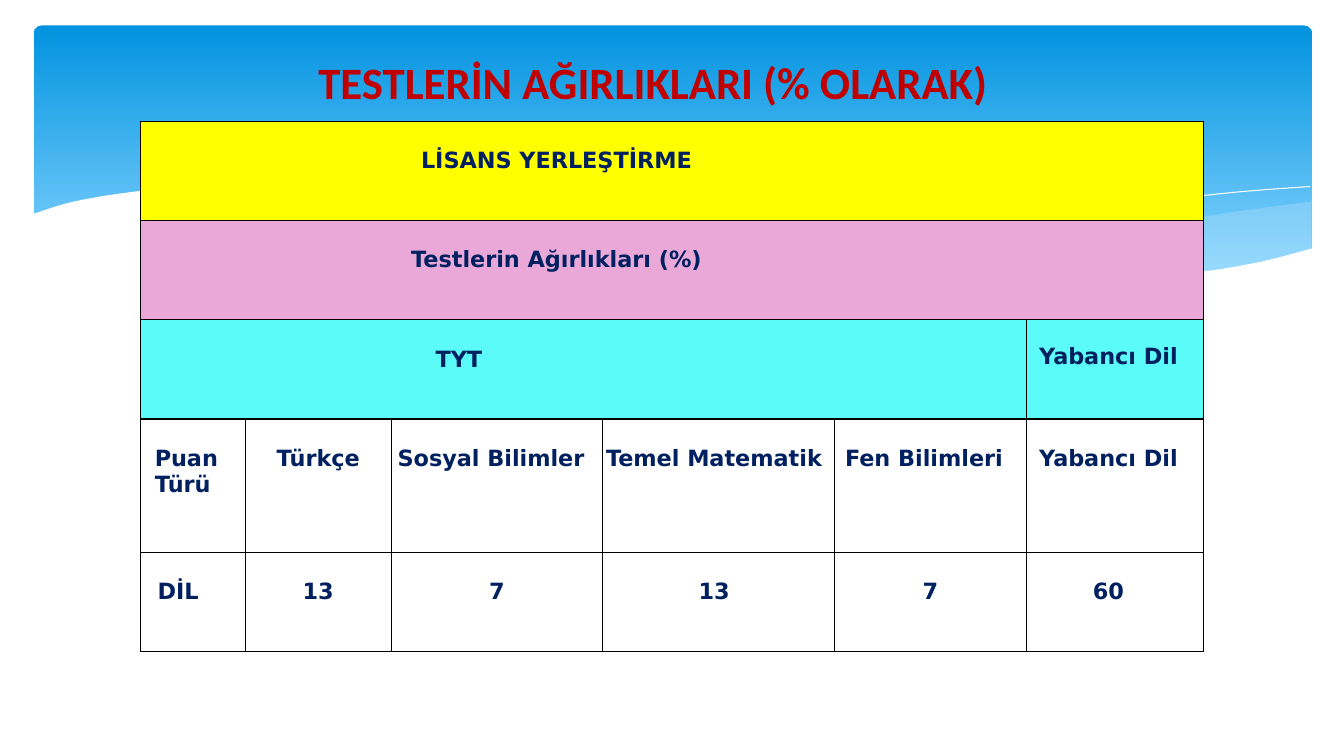
from dataclasses import dataclass

from lxml.etree import SubElement
from pptx import Presentation
from pptx.dml.color import RGBColor
from pptx.enum.shapes import MSO_SHAPE
from pptx.enum.text import MSO_ANCHOR, PP_ALIGN
from pptx.oxml.ns import qn
from pptx.slide import Slide
from pptx.table import Table
from pptx.text.text import TextFrame
from pptx.util import Cm, Pt

HUES = {
    "white": "FFFFFF", "black": "000000", "navy": "002060", "red": "C00000",
    "deep": "0293E0", "sky": "83D3FE", "mist": "C6E7FC",
    "gold": "FFFF00", "pink": "EAA8D9", "aqua": "5AFBF8",
}
COLS = (2.64, 3.68, 5.33, 5.84, 4.83, 4.47)
ROWS = (2.5, 2.5, 2.5, 3.36, 2.5)
Point = tuple[float, float]


@dataclass(frozen=True)
class Wave:
    edges: tuple[tuple[Point, ...], ...]
    fill: str = ""
    alpha: int = 100


@dataclass(frozen=True)
class Entry:
    row: int
    col: int
    text: str
    span: int = 1
    fill: str = ""
    left: float = 0
    right: float = 0
    align: PP_ALIGN = PP_ALIGN.CENTER
    top: float = 0.67


WAVES = (
    Wave((
        ((33.05, 5.08), (31.17, 5.33), (29.13, 5.66), (26.35, 6.15), (24, 6.53), (22.4, 6.73)),
        ((22.4, 6.73), (24.33, 6.88), (26.04, 7.01), (27.2, 7.06), (28.27, 7.04),
         (29.53, 6.96), (30.66, 6.83), (31.67, 6.64), (32.61, 6.4), (33.05, 6.27)),
    ), "mist", 29),
    Wave((
        ((30.23, 6.93), (28.35, 6.73), (26.26, 6.45), (23.9, 6.1), (21.31, 5.64), (18.8, 5.2),
         (16.56, 4.95), (14.22, 4.75), (12.24, 4.7), (10.62, 4.78), (9.7, 4.85)),
        ((9.7, 4.85), (12.27, 5.16), (15.21, 5.64), (17.93, 6.1), (20.37, 6.48),
         (23.04, 6.81), (25.34, 7.01), (27.33, 7.06), (29.03, 7.01), (30.23, 6.93)),
    ), "mist", 40),
    Wave((
        ((10.46, 4.95), (11.63, 4.83), (13.11, 4.75), (15.24, 4.78), (18.03, 4.93),
         (20.6, 5.18), (23.52, 5.56), (26.92, 6.12), (30.73, 6.91)),
    )),
    Wave((
        ((20.78, 6.53), (23.55, 5.97), (26.29, 5.49), (29.34, 5.05), (31.29, 4.83), (33.02, 4.7)),
    )),
    Wave((
        ((33.1, 6.25), (31.85, 6.58), (30.43, 6.83), (28.8, 6.99), (26.87, 7.01), (24.61, 6.91),
         (21.92, 6.65), (18.8, 6.22), (15.14, 5.59), (12.34, 5.13), (9.91, 4.83), (7.77, 4.7),
         (5.97, 4.67), (4.47, 4.72), (3.23, 4.85), (2.26, 5), (1.55, 5.16), (0.79, 5.41)),
        ((0.79, 8.36), (33.1, 8.36)),
    ), "white"),
)

CELLS = (
    Entry(0, 0, "LİSANS YERLEŞTİRME", span=6, fill="gold", right=5.82),
    Entry(1, 0, "Testlerin Ağırlıkları (%)", span=6, fill="pink", right=5.82),
    Entry(2, 0, "TYT", span=5, fill="aqua", right=6.27),
    Entry(2, 5, "Yabancı Dil", fill="aqua", right=0.32, top=0.6),
    Entry(3, 0, "Puan Türü", left=0.36, align=PP_ALIGN.LEFT),
    Entry(3, 1, "Türkçe", left=0.46, right=0.46),
    Entry(3, 2, "Sosyal Bilimler", right=0.3),
    Entry(3, 3, "Temel Matematik", right=0.23),
    Entry(3, 4, "Fen Bilimleri", right=0.32),
    Entry(3, 5, "Yabancı Dil", right=0.32),
    Entry(4, 0, "DİL", left=0.43, align=PP_ALIGN.LEFT),
    Entry(4, 1, "13", left=0.46, right=0.46),
    Entry(4, 2, "7"),
    Entry(4, 3, "13", right=0.23),
    Entry(4, 4, "7"),
    Entry(4, 5, "60", right=0.32),
)


def hue(name: str) -> RGBColor:
    return RGBColor.from_string(HUES[name])


def smooth(edge: tuple[Point, ...], steps: int = 4) -> list[Point]:
    if len(edge) < 3:
        return list(edge)
    pad = (edge[0], *edge, edge[-1])
    curve = [edge[0]]
    for quad in zip(pad, pad[1:], pad[2:], pad[3:]):
        for step in range(1, steps + 1):
            t = step / steps
            x, y = (
                (2 * b + (c - a) * t + (2 * a - 5 * b + 4 * c - d) * t**2
                 + (3 * b - a - 3 * c + d) * t**3) / 2
                for a, b, c, d in zip(*quad)
            )
            curve.append((x, y))
    return curve


def draw_wave(slide: Slide, wave: Wave) -> None:
    dots = [(Cm(x), Cm(y)) for edge in wave.edges for x, y in smooth(edge)]
    pen = slide.shapes.build_freeform(*dots[0])
    pen.add_line_segments(dots[1:], close=bool(wave.fill))
    shape = pen.convert_to_shape()
    shape.shadow.inherit = False
    if not wave.fill:
        shape.fill.background()
        shape.line.color.rgb = hue("white")
        shape.line.width = Pt(0)
        return
    shape.line.fill.background()
    shape.fill.solid()
    shape.fill.fore_color.rgb = hue(wave.fill)
    if wave.alpha < 100:
        tint = shape.element.spPr.find(qn("a:solidFill"))[0]
        SubElement(tint, qn("a:alpha"), val=str(wave.alpha * 1000))


def draw_sky(slide: Slide) -> None:
    sky = slide.shapes.add_shape(
        MSO_SHAPE.ROUNDED_RECTANGLE, Cm(0.85), Cm(0.64), Cm(32.22), Cm(6.86))
    sky.adjustments[0] = 0.03
    sky.shadow.inherit = False
    sky.line.fill.background()
    sky.fill.gradient()
    sky.fill.gradient_angle = 270
    for stop, name, place in zip(sky.fill.gradient_stops, ("deep", "sky"), (0, 0.9)):
        stop.color.rgb = hue(name)
        stop.position = place


def style(frame: TextFrame, face: str, size: int, name: str, align: PP_ALIGN) -> None:
    for para in frame.paragraphs:
        para.alignment = align
        for run in para.runs:
            run.font.name = face
            run.font.size = Pt(size)
            run.font.bold = True
            run.font.color.rgb = hue(name)


def fill_cell(table: Table, entry: Entry) -> None:
    cell = table.cell(entry.row, entry.col)
    if entry.span > 1:
        cell.merge(table.cell(entry.row, entry.col + entry.span - 1))
    cell.text_frame.text = entry.text
    style(cell.text_frame, "DejaVu Sans", 16, "navy", entry.align)
    cell.margin_left = cell.margin_right = cell.margin_bottom = 0
    cell.margin_top = Cm(entry.top)
    props = cell.text_frame.paragraphs[0]._p.get_or_add_pPr()
    for side, gap in (("marL", entry.left), ("marR", entry.right), ("indent", 0)):
        props.set(side, str(Cm(gap)))
    if entry.fill:
        cell.fill.solid()
        cell.fill.fore_color.rgb = hue(entry.fill)


def draw_table(slide: Slide) -> None:
    frame = slide.shapes.add_table(
        len(ROWS), len(COLS), Cm(3.54), Cm(3.06), Cm(sum(COLS)), Cm(sum(ROWS)))
    table = frame.table
    table.first_row = table.horz_banding = False
    for col, width in zip(table.columns, COLS):
        col.width = Cm(width)
    for row, height in zip(table.rows, ROWS):
        row.height = Cm(height)
    for cell in table.iter_cells():
        props = cell._tc.get_or_add_tcPr()
        for side in ("lnL", "lnR", "lnT", "lnB"):
            line = SubElement(props, qn(f"a:{side}"), w=str(Pt(1)))
            paint = SubElement(line, qn("a:solidFill"))
            SubElement(paint, qn("a:srgbClr"), val=HUES["black"])
        cell.fill.background()
    for entry in CELLS:
        fill_cell(table, entry)


def set_title(slide: Slide) -> None:
    title = slide.shapes.title
    title.left, title.top, title.width, title.height = Cm(4.83), Cm(1.24), Cm(23.52), Cm(1.63)
    frame = title.text_frame
    frame.text = "TESTLERİN AĞIRLIKLARI (% OLARAK) "
    frame.word_wrap = True
    frame.vertical_anchor = MSO_ANCHOR.MIDDLE
    style(frame, "Calibri", 32, "red", PP_ALIGN.CENTER)
    title.element.getparent().append(title.element)


def main() -> None:
    deck = Presentation()
    deck.slide_width, deck.slide_height = Cm(33.87), Cm(19.05)
    slide = deck.slides.add_slide(deck.slide_layouts[5])
    draw_sky(slide)
    for wave in WAVES:
        draw_wave(slide, wave)
    draw_table(slide)
    set_title(slide)
    deck.save("out.pptx")


if __name__ == "__main__":
    main()
